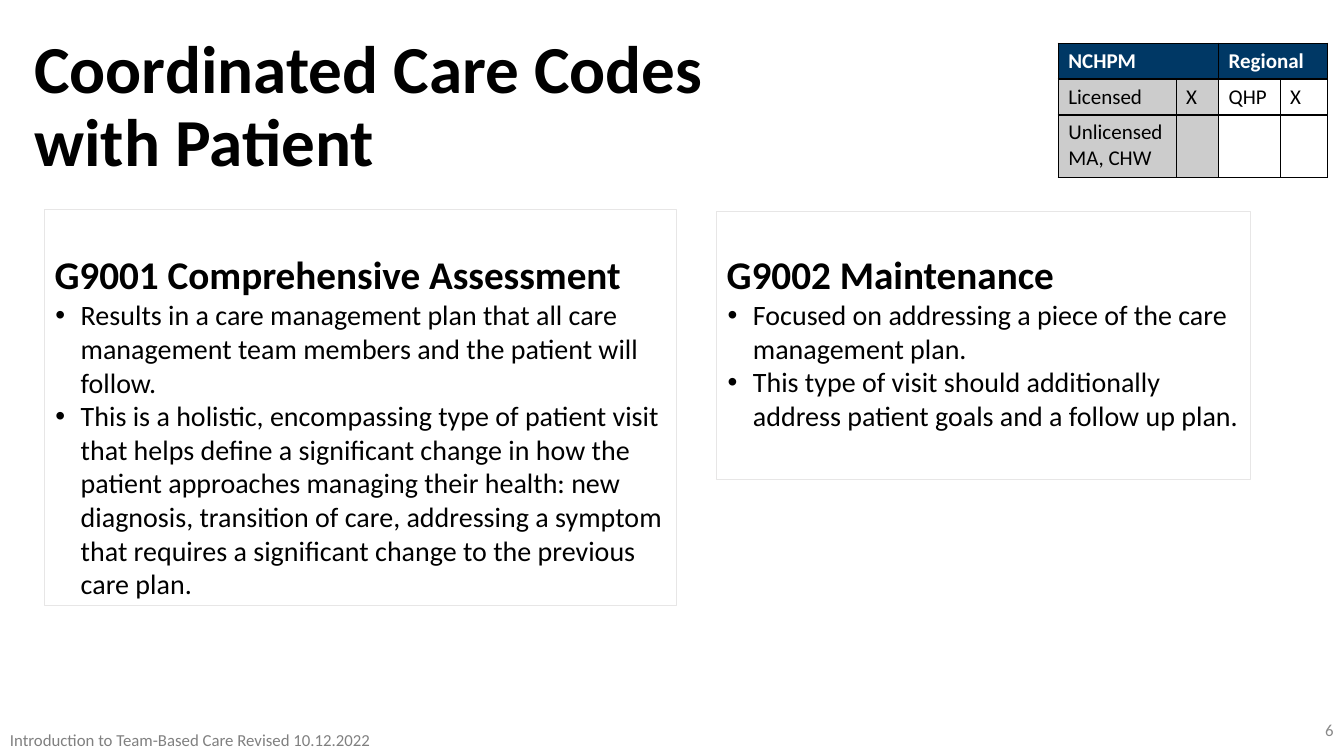
from dataclasses import dataclass

from lxml.etree import SubElement
from pptx import Presentation
from pptx.dml.color import RGBColor as RGB
from pptx.enum.text import MSO_ANCHOR as Anchor, MSO_AUTO_SIZE as AutoSize, PP_ALIGN as Align
from pptx.oxml import parse_xml
from pptx.oxml.ns import nsdecls, qn
from pptx.util import Cm, Pt


@dataclass(frozen=True)
class Theme:
    font: str = "Calibri"
    ink: str = "000000"
    white: str = "FFFFFF"
    navy: str = "003865"
    shade: str = "CCCCCC"
    frame: str = "E7E6E6"
    footer: str = "808080"
    number: str = "898989"
    title_size: int = 48
    heading_size: int = 28
    body_size: int = 20
    table_size: int = 15
    small_size: int = 12


@dataclass(frozen=True)
class Box:
    left: float
    top: float
    width: float
    height: float


@dataclass(frozen=True)
class CodePanel:
    box: Box
    heading: str
    points: tuple[str, ...]
    bottom_inset: float = 0.13


THEME = Theme()

PANELS = (
    CodePanel(
        Box(1.12, 5.28, 15.93, 9.98),
        "G9001 Comprehensive Assessment",
        (
            "Results in a care management plan that all care management team members "
            "and the patient will follow.",
            "This is a holistic, encompassing type of patient visit that helps define a "
            "significant change in how the patient approaches managing their health: new "
            "diagnosis, transition of care, addressing a symptom that requires a "
            "significant change to the previous care plan.",
        ),
    ),
    CodePanel(
        Box(18.06, 5.33, 13.46, 6.76),
        "G9002 Maintenance",
        (
            "Focused on addressing a piece of the care management plan.",
            "This type of visit should additionally address patient goals and a follow up plan.",
        ),
        bottom_inset=1.2,
    ),
)

PAYER_BOX = Box(26.67, 1.09, 6.78, 3.35)
PAYER_COLS = (2.97, 1.07, 1.55, 1.19)
PAYER_ROWS = (0.89, 0.89, 1.57)
PAYER_CELLS = (
    ("NCHPM", "", "Regional", ""),
    ("Licensed", "X", "QHP", "X"),
    ("Unlicensed\nMA, CHW", "", "", ""),
)


def place(sp, box: Box) -> None:
    sp.left, sp.top = Cm(box.left), Cm(box.top)
    sp.width, sp.height = Cm(box.width), Cm(box.height)


def put_text(tf, text: str, *, size: int, color: str = THEME.ink, bold: bool = False,
             align=Align.LEFT, spacing: float = 1.0, bullet: bool = False):
    p = tf.paragraphs[0] if not tf.text else tf.add_paragraph()
    p.text = text.replace("\n", "\v")
    p.alignment, p.line_spacing = align, spacing
    p.space_before = p.space_after = Pt(0)
    for r in p.runs:
        r.font.name, r.font.size, r.font.bold = THEME.font, Pt(size), bold
        r.font.color.rgb = RGB.from_string(color)
    pPr = p._p.get_or_add_pPr()
    pPr.set("marL", str(Cm(0.66) if bullet else 0))
    pPr.set("indent", str(Cm(-0.64) if bullet else 0))
    if bullet:
        SubElement(pPr, qn("a:buFont")).set("typeface", "Arial")
        SubElement(pPr, qn("a:buChar")).set("char", "•")
    else:
        SubElement(pPr, qn("a:buNone"))


def fix_frame(tf, anchor) -> None:
    tf.word_wrap, tf.auto_size, tf.vertical_anchor = True, AutoSize.NONE, anchor


def draw_panel(sp, panel: CodePanel) -> None:
    place(sp, panel.box)
    sp.line.color.rgb = RGB.from_string(THEME.frame)
    sp.line.width = Pt(0.75)
    tf = sp.text_frame
    fix_frame(tf, Anchor.BOTTOM)
    tf.margin_bottom = Cm(panel.bottom_inset)
    put_text(tf, panel.heading, size=THEME.heading_size, bold=True, spacing=0.9)
    for point in panel.points:
        put_text(tf, point, size=THEME.body_size, bullet=True)


def outline_cell(cell) -> None:
    tcPr = cell._tc.get_or_add_tcPr()
    for i, side in enumerate(("lnL", "lnR", "lnT", "lnB")):
        tcPr.insert(i, parse_xml(
            f'<a:{side} {nsdecls("a")} w="{Pt(1)}"><a:solidFill>'
            f'<a:srgbClr val="{THEME.ink}"/></a:solidFill></a:{side}>'))


def draw_payer_table(shapes) -> None:
    b = PAYER_BOX
    table = shapes.add_table(len(PAYER_ROWS), len(PAYER_COLS), Cm(b.left), Cm(b.top),
                             Cm(b.width), Cm(b.height)).table
    table.first_row = table.horz_banding = False
    for col, width in zip(table.columns, PAYER_COLS):
        col.width = Cm(width)
    for row, height in zip(table.rows, PAYER_ROWS):
        row.height = Cm(height)
    for i, texts in enumerate(PAYER_CELLS):
        header = i == 0
        for j, text in enumerate(texts):
            cell = table.cell(i, j)
            fill = THEME.navy if header else THEME.shade if j < 2 else THEME.white
            cell.fill.solid()
            cell.fill.fore_color.rgb = RGB.from_string(fill)
            outline_cell(cell)
            for line in text.splitlines():
                put_text(cell.text_frame, line, size=THEME.table_size, bold=header,
                         color=THEME.white if header else THEME.ink)
    for j in (0, 2):
        table.cell(0, j).merge(table.cell(0, j + 1))


def draw_note(shapes, box: Box, text: str, color: str, align=Align.LEFT) -> None:
    sp = shapes.add_textbox(0, 0, 0, 0)
    place(sp, box)
    fix_frame(sp.text_frame, Anchor.TOP)
    put_text(sp.text_frame, text, size=THEME.small_size, color=color, align=align)


def main() -> None:
    prs = Presentation()
    prs.slide_width, prs.slide_height = Cm(33.87), Cm(19.05)
    s = prs.slides.add_slide(prs.slide_layouts.get_by_name("Two Content"))

    title = s.shapes.title
    place(title, Box(0.61, 0.89, 24.74, 3.68))
    fix_frame(title.text_frame, Anchor.MIDDLE)
    put_text(title.text_frame, "Coordinated Care Codes\nwith Patient",
             size=THEME.title_size, bold=True, spacing=0.9)

    for idx, panel in enumerate(PANELS, start=1):
        draw_panel(s.placeholders[idx], panel)
    draw_payer_table(s.shapes)
    draw_note(s.shapes, Box(0, 18.26, 13.34, 0.76),
              "Introduction to Team-Based Care Revised 10.12.2022", THEME.footer)
    draw_note(s.shapes, Box(26.24, 18.01, 7.62, 1.02), "6", THEME.number, Align.RIGHT)
    prs.save("out.pptx")


if __name__ == "__main__":
    main()
